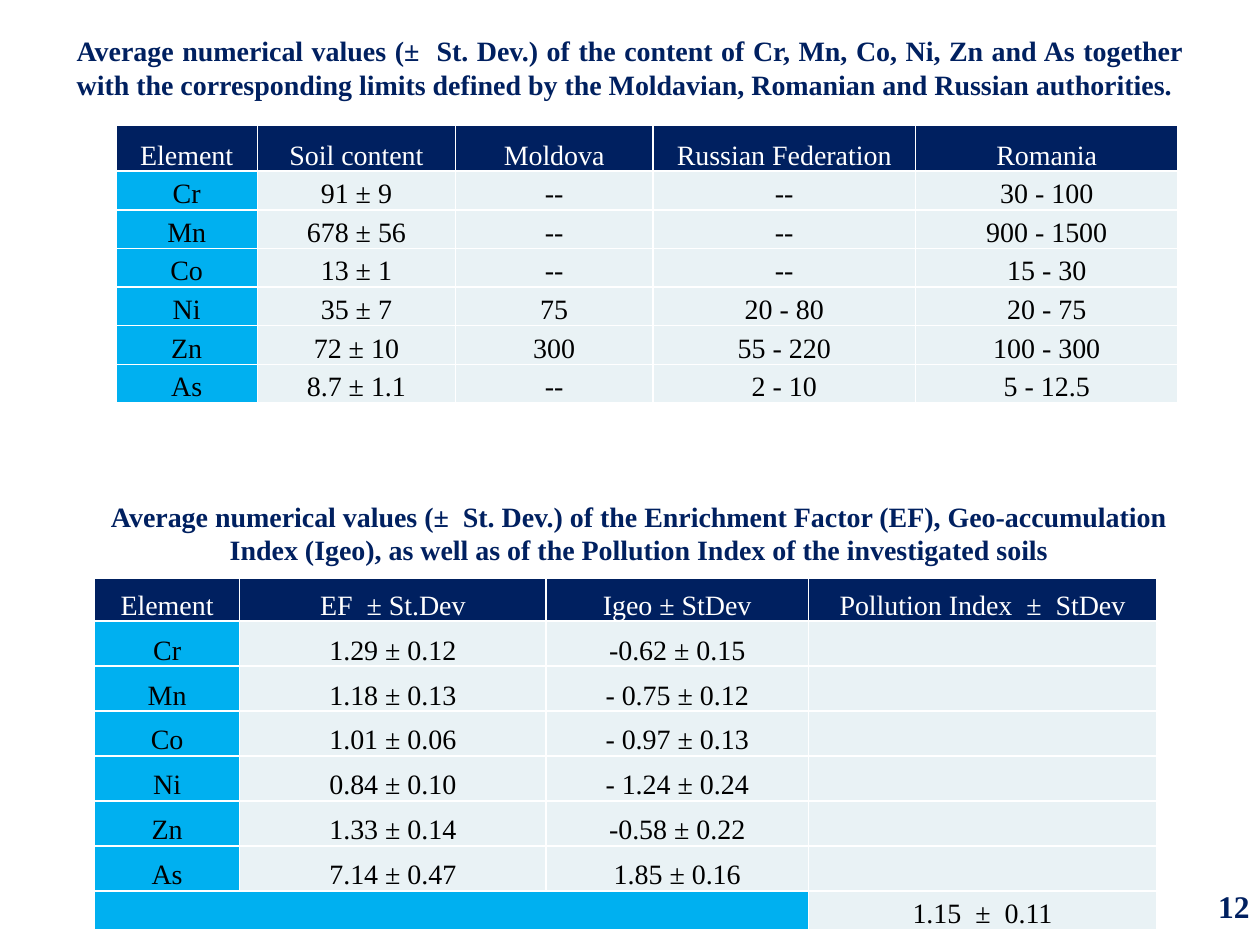
"""Build a slide with two tables of soil element contents and pollution indices."""
import dataclasses
import typing

import lxml.etree
import pptx
import pptx.dml.color
import pptx.enum.text
import pptx.oxml.ns
import pptx.slide
import pptx.table
import pptx.util

Pt = pptx.util.Pt
RGB = pptx.dml.color.RGBColor
ALIGN = pptx.enum.text.PP_ALIGN
ANCHOR = pptx.enum.text.MSO_ANCHOR


@dataclasses.dataclass(frozen=True)
class Theme:
    """Colours, typeface and type sizes of the slide."""
    navy: RGB = RGB(0x00, 0x20, 0x60)
    sky: RGB = RGB(0x00, 0xB0, 0xF0)
    pale: RGB = RGB(0xE9, 0xF2, 0xF5)
    white: RGB = RGB(0xFF, 0xFF, 0xFF)
    black: RGB = RGB(0x00, 0x00, 0x00)
    typeface: str = "Times New Roman"
    body: float = 16
    number: float = 18


@dataclasses.dataclass(frozen=True)
class Label:
    """A bold text with its place in points."""
    text: str
    left: float
    top: float
    width: float
    height: float
    size: float
    align: ALIGN
    anchor: ANCHOR
    wrap: bool = True


@dataclasses.dataclass(frozen=True)
class Grid:
    """A table with its place and measures in points."""
    left: float
    top: float
    columns: tuple[float, ...]
    heights: tuple[float, ...]
    rows: tuple[tuple[str, ...], ...]
    merged_footer: int = 0


THEME = Theme()

CONTENT_TITLE = Label(
    "Average numerical values (±  St. Dev.) of the content of Cr, Mn, Co, Ni, Zn and As "
    "together with the corresponding limits defined by the Moldavian, Romanian and Russian "
    "authorities.",
    36.7, 15.8, 646.6, 67.7, THEME.body, ALIGN.JUSTIFY, ANCHOR.TOP)
INDEX_TITLE = Label(
    "Average numerical values (±  St. Dev.) of the Enrichment Factor (EF), Geo-accumulation "
    "Index (Igeo), as well as of the Pollution Index of the investigated soils",
    56.2, 281.5, 617.8, 46, THEME.body, ALIGN.CENTER, ANCHOR.MIDDLE)
PAGE_NUMBER = Label("12", 689, 503.3, 32.4, 28.8, THEME.number,
                    ALIGN.LEFT, ANCHOR.TOP, wrap=False)

CONTENT_GRID = Grid(
    66.2, 71.4, (81, 113, 113, 150, 150), (26.4,) + (22.1,) * 6,
    (("Element", "Soil content", "Moldova", "Russian Federation", "Romania"),
     ("Cr", "91 ± 9", "--", "--", "30 - 100"),
     ("Mn", "678 ± 56", "--", "--", "900 - 1500"),
     ("Co", "13 ± 1", "--", "--", "15 - 30"),
     ("Ni", "35 ± 7", "75", "20 - 80", "20 - 75"),
     ("Zn", "72 ± 10", "300", "55 - 220", "100 - 300"),
     ("As", "8.7 ± 1.1", "--", "2 - 10", "5 - 12.5")))
INDEX_GRID = Grid(
    54, 330.4, (83, 175, 150, 199), (24.6,) + (25.7,) * 6 + (22.1,),
    (("Element", "EF  ± St.Dev", "Igeo ± StDev", "Pollution Index  ±  StDev"),
     ("Cr", "1.29 ± 0.12", "-0.62 ± 0.15", ""),
     ("Mn", "1.18 ± 0.13", "- 0.75 ± 0.12", ""),
     ("Co", "1.01 ± 0.06", "- 0.97 ± 0.13", ""),
     ("Ni", "0.84 ± 0.10", "- 1.24 ± 0.24", ""),
     ("Zn", "1.33 ± 0.14", "-0.58 ± 0.22", ""),
     ("As", "7.14 ± 0.47", "1.85 ± 0.16", ""),
     ("", "", "", "1.15  ±  0.11")),
    merged_footer=3)


def apply_format(target: typing.Any, values: dict[str, typing.Any]) -> None:
    """Set each named attribute of the target."""
    for name, value in values.items():
        setattr(target, name, value)


def write_run(paragraph: typing.Any, text: str, size: float, color: RGB, bold: bool) -> None:
    """Add one styled run to the paragraph."""
    run = paragraph.add_run()
    run.text = text
    apply_format(run.font, {"name": THEME.typeface, "size": Pt(size), "bold": bold})
    run.font.color.rgb = color


def draw_label(slide: pptx.slide.Slide, label: Label) -> None:
    """Draw a bold navy text box."""
    box = slide.shapes.add_textbox(
        Pt(label.left), Pt(label.top), Pt(label.width), Pt(label.height))
    frame = box.text_frame
    apply_format(frame, {"word_wrap": label.wrap, "vertical_anchor": label.anchor})
    frame.paragraphs[0].alignment = label.align
    write_run(frame.paragraphs[0], label.text, label.size, THEME.navy, True)


def draw_borders(cell: pptx.table._Cell) -> None:
    """Give all four sides of the cell a thin white line."""
    qn = pptx.oxml.ns.qn
    properties = cell._tc.get_or_add_tcPr()
    for side in ("a:lnL", "a:lnR", "a:lnT", "a:lnB"):
        line = lxml.etree.SubElement(properties, qn(side), w=str(Pt(1)))
        fill = lxml.etree.SubElement(line, qn("a:solidFill"))
        lxml.etree.SubElement(fill, qn("a:srgbClr"), val=str(THEME.white))


def fill_cell(cell: pptx.table._Cell, text: str, background: RGB, color: RGB) -> None:
    """Style one cell and write its text."""
    apply_format(cell, {
        "margin_left": Pt(1.4), "margin_right": Pt(1.4), "margin_top": 0,
        "margin_bottom": 0, "vertical_anchor": ANCHOR.BOTTOM})
    draw_borders(cell)
    cell.fill.solid()
    cell.fill.fore_color.rgb = background
    if text:
        paragraph = cell.text_frame.paragraphs[0]
        apply_format(paragraph, {
            "alignment": ALIGN.CENTER, "line_spacing": 1.15, "space_after": Pt(1.4)})
        write_run(paragraph, text, THEME.body, color, False)


def draw_grid(slide: pptx.slide.Slide, grid: Grid) -> None:
    """Draw a table with a navy header row and a sky blue first column."""
    table = slide.shapes.add_table(
        len(grid.rows), len(grid.columns), Pt(grid.left), Pt(grid.top),
        Pt(sum(grid.columns)), Pt(sum(grid.heights))).table
    apply_format(table, {"first_row": False, "horz_banding": False})
    for column, width in zip(table.columns, grid.columns):
        column.width = Pt(width)
    for row, height in zip(table.rows, grid.heights):
        row.height = Pt(height)
    for row_index, texts in enumerate(grid.rows):
        for column_index, text in enumerate(texts):
            if row_index == 0:
                background, color = THEME.navy, THEME.white
            else:
                background = THEME.sky if column_index == 0 else THEME.pale
                color = THEME.black
            fill_cell(table.cell(row_index, column_index), text, background, color)
    if grid.merged_footer:
        last = len(grid.rows) - 1
        table.cell(last, 0).merge(table.cell(last, grid.merged_footer - 1))


def main() -> None:
    """Build and save the slide."""
    presentation = pptx.Presentation()
    apply_format(presentation, {"slide_width": Pt(720), "slide_height": Pt(540)})
    slide = presentation.slides.add_slide(presentation.slide_layouts[6])
    for grid, title in ((CONTENT_GRID, CONTENT_TITLE), (INDEX_GRID, INDEX_TITLE)):
        draw_grid(slide, grid)
        draw_label(slide, title)
    draw_label(slide, PAGE_NUMBER)
    presentation.save("out.pptx")


if __name__ == "__main__":
    main()
